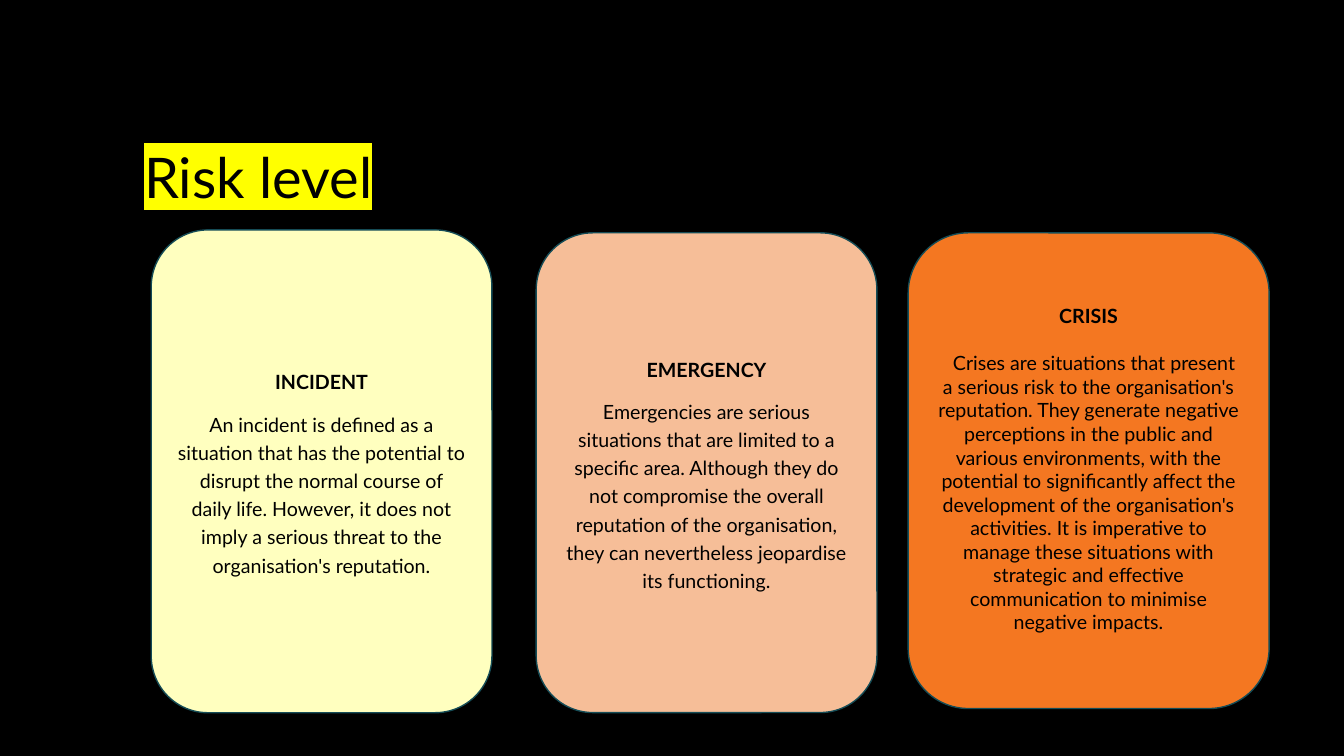
from dataclasses import dataclass

from lxml.etree import SubElement
from pptx import Presentation
from pptx.dml.color import RGBColor
from pptx.enum.shapes import MSO_SHAPE
from pptx.enum.text import MSO_ANCHOR, MSO_AUTO_SIZE, PP_ALIGN
from pptx.oxml.ns import qn
from pptx.util import Pt


@dataclass(frozen=True)
class Theme:
    font: str = "Lato"
    background: str = "000000"
    text: str = "000000"
    highlight: str = "FFFF00"
    outline: str = "154C56"
    incident: str = "FFFFBF"
    emergency: str = "F6BE98"
    crisis: str = "F47721"
    title_size: int = 40
    card_size: int = 14


THEME = Theme()


@dataclass(frozen=True)
class Card:
    heading: str
    description: str
    fill: str
    frame: tuple
    line_spacing: float = 1.2
    gap: float = 10
    indent: float = 0
    bottom_inset: float = 3.6


CARDS = (
    Card(
        "INCIDENT",
        "An incident is defined as a situation that has the potential to disrupt "
        "the normal course of daily life. However, it does not imply a serious "
        "threat to the organisation's reputation.",
        THEME.incident,
        (108, 164.2, 243.4, 344.9),
    ),
    Card(
        "EMERGENCY",
        "Emergencies are serious situations that are limited to a specific area. "
        "Although they do not compromise the overall reputation of the "
        "organisation, they can nevertheless jeopardise its functioning.",
        THEME.emergency,
        (383, 166.3, 243.4, 342.7),
    ),
    Card(
        "CRISIS",
        "Crises are situations that present a serious risk to the organisation's "
        "reputation. They generate negative perceptions in the public and various "
        "environments, with the potential to significantly affect the development "
        "of the organisation's activities. It is imperative to manage these "
        "situations with strategic and effective communication to minimise "
        "negative impacts.",
        THEME.crisis,
        (648.7, 166.3, 257.8, 339.8),
        line_spacing=1.0,
        gap=16.8,
        indent=8,
        bottom_inset=6,
    ),
)


def rgb(value):
    return RGBColor.from_string(value)


def style_font(para, size, bold=False):
    font = para.font
    font.name = THEME.font
    font.size = Pt(size)
    font.bold = bold
    font.color.rgb = rgb(THEME.text)


def highlight(span, colour):
    properties = span.font._element if hasattr(span.font, "_element") else span._r.get_or_add_rPr()
    mark = SubElement(properties, qn("a:highlight"))
    SubElement(mark, qn("a:srgbClr")).set("val", colour)


def write_title(page, text):
    title = page.shapes.title
    title.left, title.top, title.width, title.height = map(Pt, (95.8, 28.8, 747.4, 124.6))
    frame = title.text_frame
    frame.word_wrap = True
    frame.auto_size = MSO_AUTO_SIZE.NONE
    frame.vertical_anchor = MSO_ANCHOR.BOTTOM
    para = frame.paragraphs[0]
    para.alignment = PP_ALIGN.LEFT
    para.line_spacing = 1.2
    para.space_before = Pt(0)
    style_font(para, THEME.title_size)
    span = para.add_run()
    span.text = text
    highlight(span, THEME.highlight)


def add_card(page, card):
    box = page.shapes.add_shape(MSO_SHAPE.ROUNDED_RECTANGLE, *map(Pt, card.frame))
    box.shadow.inherit = False
    box.fill.solid()
    box.fill.fore_color.rgb = rgb(card.fill)
    box.line.color.rgb = rgb(THEME.outline)
    box.line.width = Pt(1)
    frame = box.text_frame
    frame.word_wrap = True
    frame.vertical_anchor = MSO_ANCHOR.MIDDLE
    frame.margin_bottom = Pt(card.bottom_inset)
    heading = frame.paragraphs[0]
    description = frame.add_paragraph()
    for para, text in ((heading, card.heading), (description, card.description)):
        para.text = text
        para.alignment = PP_ALIGN.CENTER
        para.line_spacing = card.line_spacing
        style_font(para, THEME.card_size, bold=para is heading)
    description.space_before = Pt(card.gap)
    if card.indent:
        description._p.get_or_add_pPr().set("indent", str(Pt(card.indent)))


def main():
    deck = Presentation()
    deck.slide_width, deck.slide_height = Pt(960), Pt(540)
    page = deck.slides.add_slide(deck.slide_layouts[5])
    page.background.fill.solid()
    page.background.fill.fore_color.rgb = rgb(THEME.background)
    write_title(page, "Risk level")
    for card in CARDS:
        add_card(page, card)
    deck.save("out.pptx")


if __name__ == "__main__":
    main()
